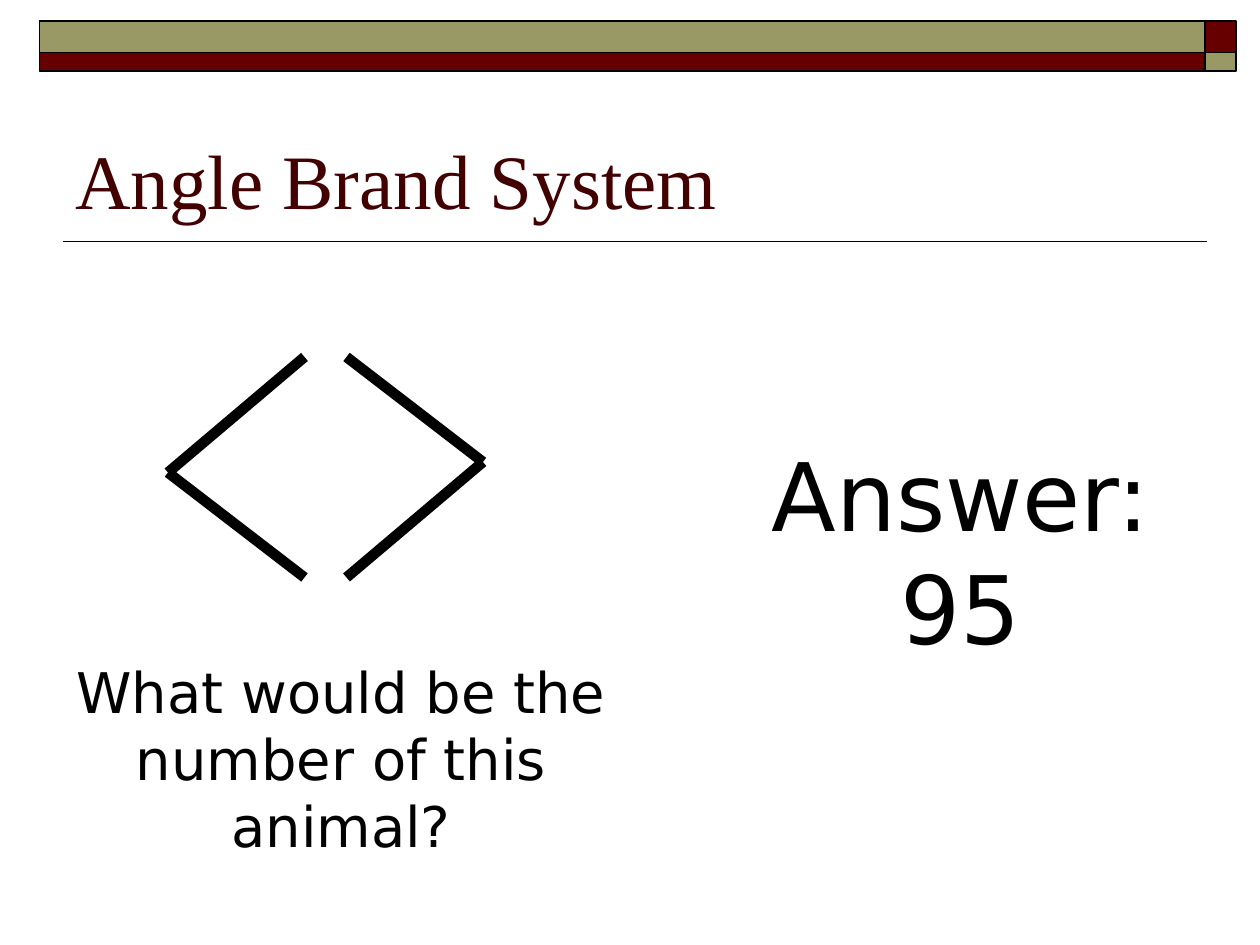
from dataclasses import dataclass
from itertools import pairwise

from lxml.etree import SubElement
from pptx import Presentation
from pptx.dml.color import RGBColor
from pptx.enum.shapes import MSO_CONNECTOR, MSO_SHAPE
from pptx.enum.text import MSO_ANCHOR, PP_ALIGN
from pptx.oxml.ns import qn
from pptx.util import Inches, Pt


@dataclass(frozen=True)
class Theme:
    """Colours, fonts and sizes of the slide."""
    olive: RGBColor = RGBColor(0x99, 0x99, 0x66)
    maroon: RGBColor = RGBColor(0x66, 0x00, 0x00)
    title: RGBColor = RGBColor(0x42, 0x00, 0x00)
    ink: RGBColor = RGBColor(0x00, 0x00, 0x00)
    title_font: str = "Times New Roman"
    body_font: str = "DejaVu Sans"
    title_size: int = 44
    question_size: int = 32
    answer_size: int = 54
    thin: int = 1
    thick: int = 6


THEME = Theme()
CELLS_PER_INCH = 12


def grid(*cells):
    """Turn grid columns and rows into lengths."""
    return [Inches(c / CELLS_PER_INCH) for c in cells]


def add_line(shapes, start, end, weight):
    """Draw a straight line between two grid points."""
    cxn = shapes.add_connector(MSO_CONNECTOR.STRAIGHT, *grid(*start, *end))
    cxn.line.color.rgb = THEME.ink
    cxn.line.width = Pt(weight)
    SubElement(cxn.element.spPr, qn("a:effectLst"))


def add_block(shapes, box, color):
    """Draw one outlined rectangle of the banner."""
    sp = shapes.add_shape(MSO_SHAPE.RECTANGLE, *grid(*box))
    sp.shadow.inherit = False
    sp.fill.solid()
    sp.fill.fore_color.rgb = color
    sp.line.color.rgb = THEME.ink
    sp.line.width = Pt(THEME.thin)


def add_banner(shapes):
    """Draw the two-row banner with its colours swapped in the end column."""
    group = shapes.add_group_shape().shapes
    columns = [(3.75, 111), (114.75, 3)]
    rows = [(2, 3), (5, 1.8)]
    colors = (THEME.olive, THEME.maroon)
    for i, (left, width) in enumerate(columns):
        for j, (top, height) in enumerate(rows):
            add_block(group, (left, top, width, height), colors[(i + j) % 2])


def add_brand(shapes):
    """Draw the two facing angles of the brand."""
    group = shapes.add_group_shape().shapes
    left_angle = [(29, 34), (16, 45), (29, 55)]
    right_angle = [(33, 55), (46, 44), (33, 34)]
    for angle in (left_angle, right_angle):
        for start, end in pairwise(angle):
            add_line(group, start, end, THEME.thick)


def add_text(shapes, box, text, size, font=THEME.body_font, color=THEME.ink,
             align=PP_ALIGN.CENTER, anchor=MSO_ANCHOR.TOP):
    """Add a wrapped text box in one style."""
    tf = shapes.add_textbox(*grid(*box)).text_frame
    tf.word_wrap = True
    tf.vertical_anchor = anchor
    tf.text = text
    p = tf.paragraphs[0]
    p.alignment = align
    r = p.runs[0]
    r.font.size = Pt(size)
    r.font.name = font
    r.font.color.rgb = color


def main():
    """Build and save the slide."""
    prs = Presentation()
    prs.slide_width, prs.slide_height = Inches(10), Inches(7.5)
    shapes = prs.slides.add_slide(prs.slide_layouts[6]).shapes
    add_line(shapes, (115, 23), (6, 23), THEME.thin)
    add_banner(shapes)
    add_text(shapes, (6, 7, 108, 15), "Angle Brand System", THEME.title_size,
             THEME.title_font, THEME.title, PP_ALIGN.LEFT, MSO_ANCHOR.BOTTOM)
    add_text(shapes, (5, 62, 55, 20.4),
             "What would be the number of this animal?", THEME.question_size)
    add_brand(shapes)
    add_text(shapes, (71, 41, 41, 22.8), "Answer: 95", THEME.answer_size)
    prs.save("out.pptx")


if __name__ == "__main__":
    main()
